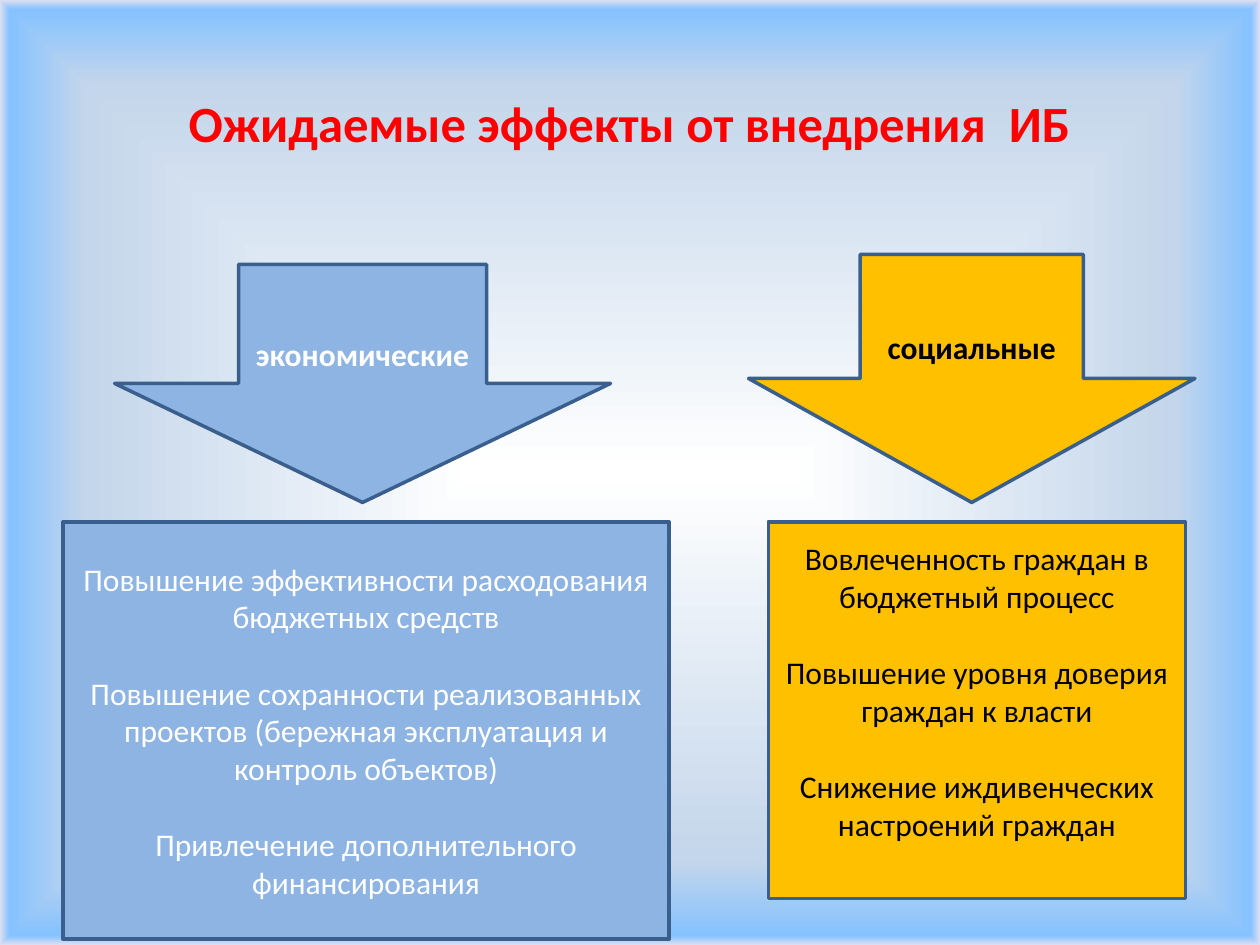
from dataclasses import dataclass

import lxml.etree
import pptx
import pptx.dml.color
import pptx.enum.shapes
import pptx.enum.text
import pptx.oxml
import pptx.oxml.ns
import pptx.util

Cm = pptx.util.Cm
Pt = pptx.util.Pt
Shapes = pptx.enum.shapes.MSO_SHAPE
Anchor = pptx.enum.text.MSO_ANCHOR

COLOURS = {
    "title": "FF0000",
    "blue": "8EB4E3",
    "amber": "FFC000",
    "outline": "3A5F8C",
    "white": "FFFFFF",
    "black": "000000",
}
BACKGROUND_STOPS = [
    (0, "FFFFFF"),
    (82, "C4D6EB"),
    (98, "85C2FF"),
    (100, "DEDFF2"),
    (100, "FFEBFA"),
]


@dataclass
class Block:
    kind: Shapes
    left: float
    top: float
    width: float
    height: float
    fill: str
    ink: str
    lines: list[str]
    bold: bool = False
    bottom_inset: float = 0.13


BLOCKS = [
    Block(Shapes.DOWN_ARROW, 2.31, 5.33, 10, 4.8, "blue", "white",
          ["экономические"], bold=True),
    Block(Shapes.DOWN_ARROW, 15.09, 5.13, 9, 5, "amber", "black",
          ["социальные"], bold=True),
    Block(Shapes.RECTANGLE, 1.27, 10.52, 12.22, 8.41, "blue", "white", [
        "Повышение эффективности расходования бюджетных средств",
        "Повышение сохранности реализованных проектов "
        "(бережная эксплуатация и контроль объектов)",
        "Привлечение дополнительного финансирования",
    ]),
    Block(Shapes.RECTANGLE, 15.49, 10.52, 8.41, 7.59, "amber", "black", [
        "Вовлеченность граждан в бюджетный процесс",
        "Повышение уровня доверия граждан к власти",
        "Снижение иждивенческих настроений граждан",
    ], bottom_inset=0.9),
]


def colour(name: str) -> pptx.dml.color.RGBColor:
    return pptx.dml.color.RGBColor.from_string(COLOURS[name])


def write_text(frame, lines: list[str], *, size: float, ink: str,
               bold: bool = False, anchor: Anchor = Anchor.MIDDLE,
               gap: float = 22, before: float = 0) -> None:
    frame.word_wrap = True
    frame.vertical_anchor = anchor
    for index, line in enumerate(lines):
        para = frame.add_paragraph() if index else frame.paragraphs[0]
        para.alignment = pptx.enum.text.PP_ALIGN.CENTER
        para.space_before = Pt(gap if index else before)
        span = para.add_run()
        span.text = line
        span.font.name = "Calibri"
        span.font.size = Pt(size)
        span.font.bold = bold
        span.font.color.rgb = colour(ink)


def paint_background(page) -> None:
    fill = page.background.fill
    fill.gradient()
    gradient = page.element.find(".//" + pptx.oxml.ns.qn("a:gradFill"))
    stops = "".join(
        f'<a:gs pos="{position * 1000}"><a:srgbClr val="{value}"/></a:gs>'
        for position, value in BACKGROUND_STOPS
    )
    replacement = pptx.oxml.parse_xml(
        f'<a:gradFill {pptx.oxml.ns.nsdecls("a")} rotWithShape="1">'
        f'<a:gsLst>{stops}</a:gsLst><a:path path="shape">'
        '<a:fillToRect l="50000" t="50000" r="50000" b="50000"/>'
        '</a:path></a:gradFill>'
    )
    gradient.getparent().replace(gradient, replacement)


def draw_block(page, block: Block) -> None:
    shape = page.shapes.add_shape(
        block.kind, Cm(block.left), Cm(block.top),
        Cm(block.width), Cm(block.height),
    )
    shape.shadow.inherit = False
    shape.fill.solid()
    shape.fill.fore_color.rgb = colour(block.fill)
    shape.line.color.rgb = colour("outline")
    shape.line.width = Pt(2)
    shape.text_frame.margin_bottom = Cm(block.bottom_inset)
    write_text(shape.text_frame, block.lines, size=18, ink=block.ink,
               bold=block.bold)


def main() -> None:
    deck = pptx.Presentation()
    deck.slide_width = Cm(25.4)
    deck.slide_height = Cm(19.05)
    page = deck.slides.add_slide(deck.slide_layouts[6])
    paint_background(page)
    title = page.shapes.add_textbox(Cm(1.27), Cm(1.73), Cm(22.86), Cm(15.29))
    write_text(title.text_frame, ["Ожидаемые эффекты от внедрения  ИБ"],
               size=29, ink="title", bold=True, anchor=Anchor.TOP, before=5.8)
    for block in BLOCKS:
        draw_block(page, block)
    deck.save("out.pptx")


if __name__ == "__main__":
    main()
